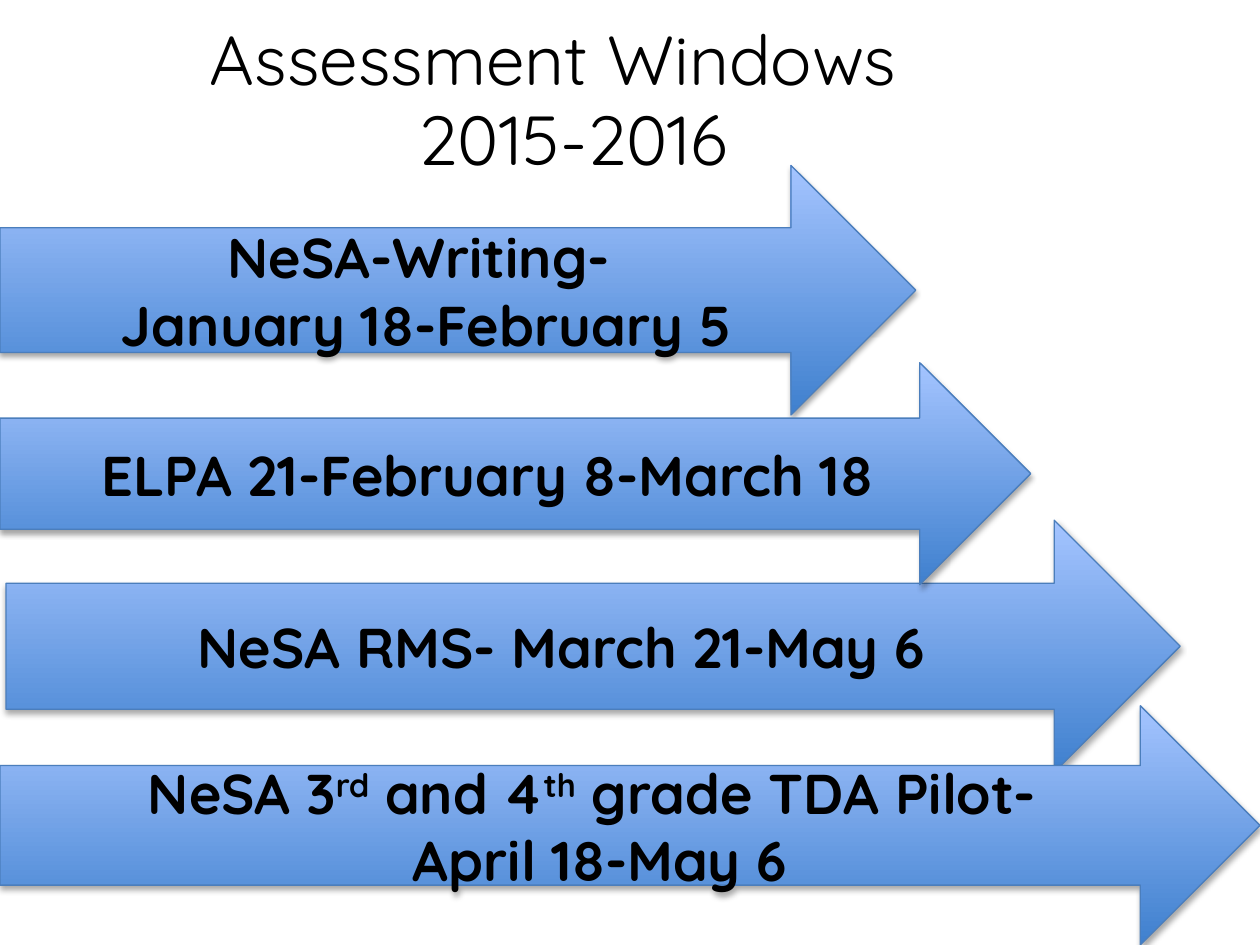
import dataclasses

import pptx
import pptx.dml.color
import pptx.enum.shapes
import pptx.enum.text
import pptx.oxml
import pptx.oxml.ns
import pptx.util

Pt = pptx.util.Pt
RGB = pptx.dml.color.RGBColor.from_string


@dataclasses.dataclass
class Theme:
    font: str = "Quicksand"
    ink: str = "000000"
    low: str = "3F80CE"
    high: str = "A4C4FF"
    edge: str = "4B7EBC"
    head: float = 39.6
    body: float = 32


class Page:
    def __init__(self, deck, theme):
        self.theme = theme
        self.slide = deck.slides.add_slide(deck.slide_layouts[6])

    def style(self, para, size, bold=False):
        para.alignment = pptx.enum.text.PP_ALIGN.CENTER
        for run in para.runs:
            run.font.name = self.theme.font
            run.font.size = Pt(size)
            run.font.bold = bold
            run.font.color.rgb = RGB(self.theme.ink)

    def title(self, text, box, shift):
        """Centre two lines, the first moved left and the second right."""
        frame = self.slide.shapes.add_textbox(*map(Pt, box)).text_frame
        frame.word_wrap = True
        frame.vertical_anchor = pptx.enum.text.MSO_ANCHOR.MIDDLE
        frame.text = text
        for para, side in zip(frame.paragraphs, ("marR", "marL")):
            para.line_spacing = 0.96
            para._p.get_or_add_pPr().set(side, str(Pt(2 * shift)))
            self.style(para, self.theme.head)

    def shade(self, shape):
        shape.shadow.inherit = False
        glow = shape._element.spPr.find(pptx.oxml.ns.qn("a:effectLst"))
        glow.append(pptx.oxml.parse_xml(
            f'<a:outerShdw {pptx.oxml.ns.nsdecls("a")} blurRad="{Pt(3.1)}"'
            f' dist="{Pt(1.8)}" dir="5400000" rotWithShape="0">'
            f'<a:srgbClr val="{self.theme.ink}"><a:alpha val="35000"/>'
            '</a:srgbClr></a:outerShdw>'))

    def arrow(self, text, box):
        """Draw a block arrow; text between ^ marks is raised."""
        kind = pptx.enum.shapes.MSO_SHAPE.RIGHT_ARROW
        shape = self.slide.shapes.add_shape(kind, *map(Pt, box))
        shape.fill.gradient()
        shape.fill.gradient_angle = 90
        for stop, tint in zip(shape.fill.gradient_stops,
                              (self.theme.low, self.theme.high)):
            stop.color.rgb = RGB(tint)
        shape.line.color.rgb = RGB(self.theme.edge)
        shape.line.width = Pt(0.75)
        self.shade(shape)
        frame = shape.text_frame
        frame.word_wrap = True
        frame.vertical_anchor = pptx.enum.text.MSO_ANCHOR.MIDDLE
        for row, line in enumerate(text.split("\n")):
            para = frame.add_paragraph() if row else frame.paragraphs[0]
            for part, words in enumerate(line.split("^")):
                run = para.add_run()
                run.text = words
                if part % 2:
                    run._r.get_or_add_rPr().set("baseline", "30000")
            self.style(para, self.theme.body, bold=True)


def main():
    deck = pptx.Presentation()
    deck.slide_width, deck.slide_height = Pt(720), Pt(540)
    page = Page(deck, Theme())
    page.title("Assessment Windows\n2015-2016", (3.6, 21.6, 648, 72.7), 11.5)
    for text, box in (
        ("NeSA-Writing- \nJanuary 18-February 5", (0, 94.5, 523.3, 142.6)),
        ("NeSA RMS- March 21-May 6", (3.4, 297.3, 671, 144)),
        ("NeSA 3^rd^ and 4^th^ grade TDA Pilot- \nApril 18-May 6",
         (0, 403.3, 720, 136.7)),
        ("ELPA 21-February 8-March 18", (0, 207.2, 589, 126.9)),
    ):
        page.arrow(text, box)
    deck.save("out.pptx")


if __name__ == "__main__":
    main()
